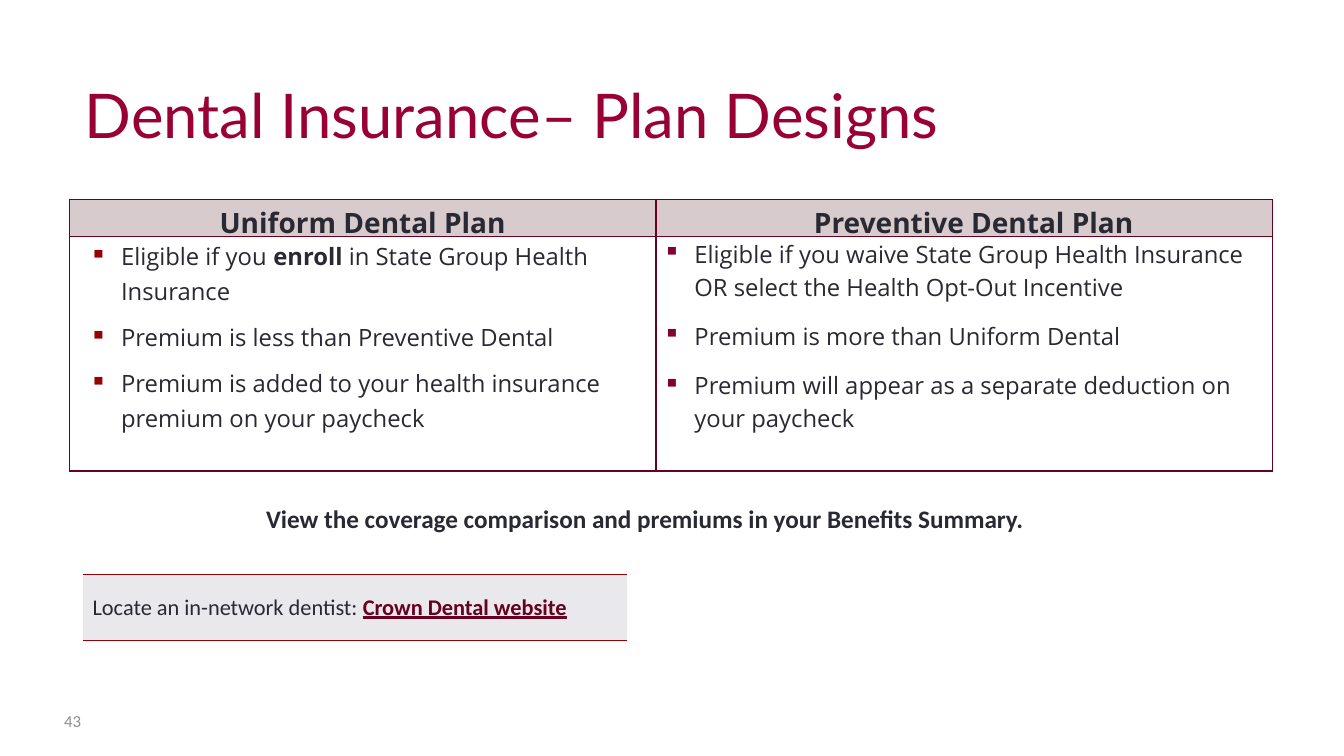
from dataclasses import dataclass

from lxml.etree import SubElement
from pptx import Presentation
from pptx.dml.color import RGBColor
from pptx.enum.text import MSO_ANCHOR, MSO_AUTO_SIZE, PP_ALIGN
from pptx.oxml import parse_xml
from pptx.oxml.ns import nsdecls, qn
from pptx.util import Cm, Pt


@dataclass(frozen=True)
class Theme:
    title_font: str = "Lato"
    plan_font: str = "Open Sans"
    text_font: str = "Calibri"
    title_size: float = 44
    heading_size: float = 20
    note_size: float = 18
    plan_size: float = 17
    locator_size: float = 16
    page_size: float = 12
    crimson: str = "990033"
    wine: str = "68001F"
    red: str = "960000"
    bullet_wine: str = "820032"
    ink: str = "292934"
    grey: str = "8E8E90"
    heading_fill: str = "D8CBCD"
    locator_fill: str = "E8E8ED"


class PlanSlide:
    def __init__(self, deck, theme):
        self.theme = theme
        self.slide = deck.slides.add_slide(deck.slide_layouts[5])

    def fill_paragraph(self, paragraph, runs, font, size, color, bold=False):
        """Each run is a plain string or a (text, bold, underline, color) tuple."""
        paragraph.font.name = font
        paragraph.font.size = Pt(size)
        paragraph.font.bold = bold
        paragraph.font.color.rgb = RGBColor.from_string(color)
        for part in runs:
            run = paragraph.add_run()
            if isinstance(part, str):
                run.text = part
            else:
                run.text, run.font.bold, run.font.underline, run_color = part
                run.font.color.rgb = RGBColor.from_string(run_color)

    def title(self, text, left, top, width, height):
        holder = self.slide.shapes.title
        holder.left, holder.top, holder.width, holder.height = left, top, width, height
        frame = holder.text_frame
        frame.auto_size = MSO_AUTO_SIZE.NONE
        frame.vertical_anchor = MSO_ANCHOR.BOTTOM
        heading = frame.paragraphs[0]
        heading.alignment = PP_ALIGN.LEFT
        self.fill_paragraph(heading, [text], self.theme.title_font,
                            self.theme.title_size, self.theme.crimson)

    def text(self, text, left, top, width, height, size, color, bold=False,
             align=PP_ALIGN.LEFT, anchor=MSO_ANCHOR.TOP):
        frame = self.slide.shapes.add_textbox(left, top, width, height).text_frame
        frame.word_wrap = True
        frame.vertical_anchor = anchor
        frame.paragraphs[0].alignment = align
        self.fill_paragraph(frame.paragraphs[0], [text], self.theme.text_font, size,
                            color, bold)

    def table(self, left, top, widths, heights):
        table = self.slide.shapes.add_table(len(heights), len(widths), left, top,
                                            sum(widths), sum(heights)).table
        table.first_row = table.horz_banding = False
        for column, width in zip(table.columns, widths):
            column.width = width
        for row, height in zip(table.rows, heights):
            row.height = height
        return table

    def style_cell(self, cell, fill, border, sides="LRTB"):
        if fill:
            cell.fill.solid()
            cell.fill.fore_color.rgb = RGBColor.from_string(fill)
        else:
            cell.fill.background()
        properties = cell._tc.get_or_add_tcPr()
        for position, side in enumerate("LRTB"):
            paint = (f'<a:solidFill><a:srgbClr val="{border}"/></a:solidFill>'
                     if side in sides else "<a:noFill/>")
            properties.insert(position, parse_xml(
                f'<a:ln{side} {nsdecls("a")} w="{Pt(1)}">{paint}</a:ln{side}>'))

    def plan_cell(self, cell, fill=None):
        self.style_cell(cell, fill, self.theme.wine)
        cell.margin_left = cell.margin_right = Cm(0.18)
        cell.margin_top, cell.margin_bottom = Cm(0.03), 0

    def plan_heading(self, cell, text, indent):
        self.plan_cell(cell, self.theme.heading_fill)
        cell.vertical_anchor = MSO_ANCHOR.MIDDLE
        heading = cell.text_frame.paragraphs[0]
        heading.alignment = PP_ALIGN.CENTER
        heading.line_spacing = 1.07
        heading._p.get_or_add_pPr().set("marL", str(indent))
        self.fill_paragraph(heading, [text], self.theme.plan_font,
                            self.theme.heading_size, self.theme.ink, True)

    def plan_bullets(self, cell, items, indent, color, spacing, before, after):
        self.plan_cell(cell)
        frame = cell.text_frame
        for index, runs in enumerate(items):
            item = frame.add_paragraph() if index else frame.paragraphs[0]
            properties = item._p.get_or_add_pPr()
            properties.set("marL", str(indent))
            properties.set("indent", str(-Cm(0.79)))
            bullet_color = SubElement(properties, qn("a:buClr"))
            SubElement(bullet_color, qn("a:srgbClr")).set("val", color)
            SubElement(properties, qn("a:buChar")).set("char", "▪")
            item.line_spacing = spacing
            item.space_before = Pt(before if index else 0)
            item.space_after = Pt(after)
            self.fill_paragraph(item, runs, self.theme.plan_font, self.theme.plan_size,
                                self.theme.ink)


def main():
    deck = Presentation()
    deck.slide_width, deck.slide_height = Cm(33.87), Cm(19.05)
    theme = Theme()
    page = PlanSlide(deck, theme)

    page.title("Dental Insurance– Plan Designs", Cm(1.88), Cm(0.76), Cm(30.33), Cm(3.18))
    page.text("43", Cm(1.37), Cm(17.65), Cm(1.42), Cm(1.02), theme.page_size, theme.grey,
              anchor=MSO_ANCHOR.MIDDLE)

    # Plan comparison
    plans = page.table(Cm(1.75), Cm(5.03), [Cm(14.78), Cm(15.54)], [Cm(0.92), Cm(5.9)])
    page.plan_heading(plans.cell(0, 0), "Uniform Dental Plan", 0)
    page.plan_heading(plans.cell(0, 1), "Preventive Dental Plan", Cm(0.48))
    uniform = [
        ["Eligible if you ", ("enroll", True, None, theme.ink),
         " in State Group Health Insurance"],
        ["Premium is less than Preventive Dental"],
        ["Premium is added to your health insurance premium on your paycheck"],
    ]
    preventive = [
        ["Eligible if you waive State Group Health Insurance "
         "OR select the Health Opt-Out Incentive"],
        ["Premium is more than Uniform Dental"],
        ["Premium will appear as a separate deduction on your paycheck"],
    ]
    page.plan_bullets(plans.cell(1, 0), uniform, Cm(1.12), theme.red, 1.07, 0, 8)
    page.plan_bullets(plans.cell(1, 1), preventive, Cm(0.79), theme.bullet_wine, 1.0, 6, 6)

    # Dentist locator
    locator = page.table(Cm(2.08), Cm(14.48), [Cm(13.72)], [Cm(1.65)]).cell(0, 0)
    page.style_cell(locator, theme.locator_fill, theme.red, "TB")
    locator.vertical_anchor = MSO_ANCHOR.MIDDLE
    page.fill_paragraph(locator.text_frame.paragraphs[0],
                        ["Locate an in-network dentist: ",
                         ("Crown Dental website", True, True, theme.wine)],
                        theme.text_font, theme.locator_size, theme.ink)

    # Pointer to the summary
    page.text("View the coverage comparison and premiums in your Benefits Summary.",
              Cm(1.88), Cm(12.55), Cm(28.75), Cm(1.02), theme.note_size, theme.ink,
              bold=True, align=PP_ALIGN.CENTER)

    deck.save("out.pptx")


if __name__ == "__main__":
    main()
